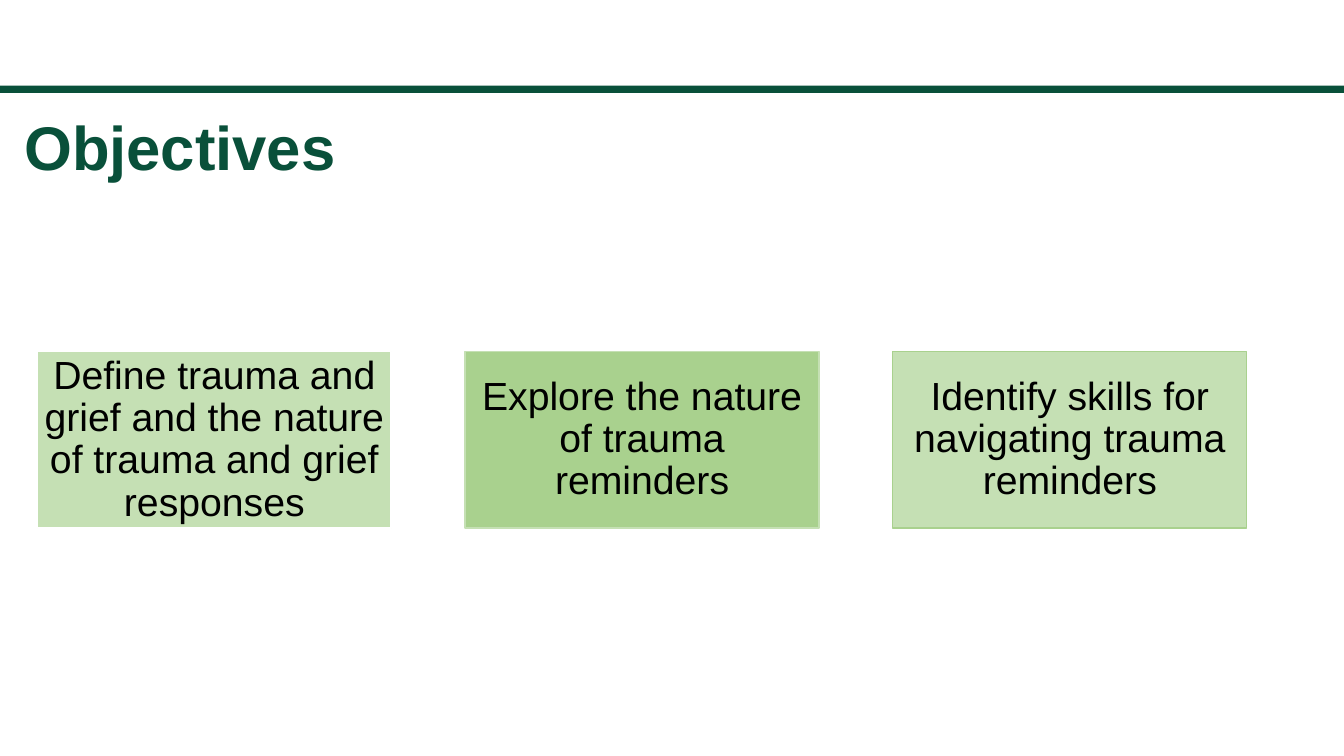
from dataclasses import dataclass

from pptx import Presentation
from pptx.dml.color import RGBColor
from pptx.enum.shapes import MSO_SHAPE
from pptx.enum.text import MSO_ANCHOR, PP_ALIGN
from pptx.util import Cm, Pt


@dataclass(frozen=True)
class Theme:
    font: str = "Arial"
    title_size: int = 44
    card_size: int = 28
    line_spacing: float = 0.9
    dark_green: str = "09503A"
    mid_green: str = "A9D18E"
    pale_green: str = "C5E0B4"
    white: str = "FFFFFF"
    black: str = "000000"


@dataclass(frozen=True)
class Box:
    """A region of the page, in centimetres."""
    left: float
    top: float
    width: float
    height: float

    def lengths(self):
        return Cm(self.left), Cm(self.top), Cm(self.width), Cm(self.height)


THEME = Theme()
RULE_BOX = Box(-0.08, 2.16, 33.95, 0.18)
TITLE_BOX = Box(0.51, 2.9, 30.48, 2.87)
CARDS_BOX = Box(0.94, 8.86, 30.48, 4.45)
CARD_GAP = 1.86

# Wording, fill and outline of each card
OBJECTIVES = [
    ("Define trauma and grief and the nature of trauma and grief responses",
     THEME.pale_green, THEME.white),
    ("Explore the nature of trauma reminders",
     THEME.mid_green, THEME.pale_green),
    ("Identify skills for navigating trauma reminders",
     THEME.pale_green, THEME.mid_green),
]


def add_rectangle(page, box, fill, outline=None):
    shape = page.shapes.add_shape(MSO_SHAPE.RECTANGLE, *box.lengths())
    shape.shadow.inherit = False
    shape.fill.solid()
    shape.fill.fore_color.rgb = RGBColor.from_string(fill)
    if outline:
        shape.line.color.rgb = RGBColor.from_string(outline)
        shape.line.width = Pt(1)
    else:
        shape.line.fill.background()
    return shape


def write_text(shape, text, size, color, align, anchor, side_inset, bold=False):
    frame = shape.text_frame
    frame.word_wrap = True
    frame.vertical_anchor = anchor
    frame.margin_left = frame.margin_right = Cm(side_inset)
    frame.margin_top = frame.margin_bottom = Cm(0.05)
    para = frame.paragraphs[0]
    para.text = text
    para.alignment = align
    para.line_spacing = THEME.line_spacing
    para.font.name = THEME.font
    para.font.size = Pt(size)
    para.font.bold = bold
    para.font.color.rgb = RGBColor.from_string(color)


def add_title(page, box, text):
    title = page.shapes.add_textbox(*box.lengths())
    write_text(title, text, THEME.title_size, THEME.dark_green,
               PP_ALIGN.LEFT, MSO_ANCHOR.TOP, 0.1, bold=True)


def add_cards(page, box, objectives):
    """Share the width of the box equally among the cards."""
    count = len(objectives)
    width = (box.width - CARD_GAP * (count - 1)) / count
    for index, (text, fill, outline) in enumerate(objectives):
        left = box.left + index * (width + CARD_GAP)
        card = add_rectangle(page, Box(left, box.top, width, box.height),
                             fill, outline)
        write_text(card, text, THEME.card_size, THEME.black,
                   PP_ALIGN.CENTER, MSO_ANCHOR.MIDDLE, 0.05)


def main():
    deck = Presentation()
    deck.slide_width, deck.slide_height = Cm(33.87), Cm(19.05)
    page = deck.slides.add_slide(deck.slide_layouts[6])
    add_rectangle(page, RULE_BOX, THEME.dark_green)
    add_title(page, TITLE_BOX, "Objectives")
    add_cards(page, CARDS_BOX, OBJECTIVES)
    deck.save("out.pptx")


if __name__ == "__main__":
    main()
